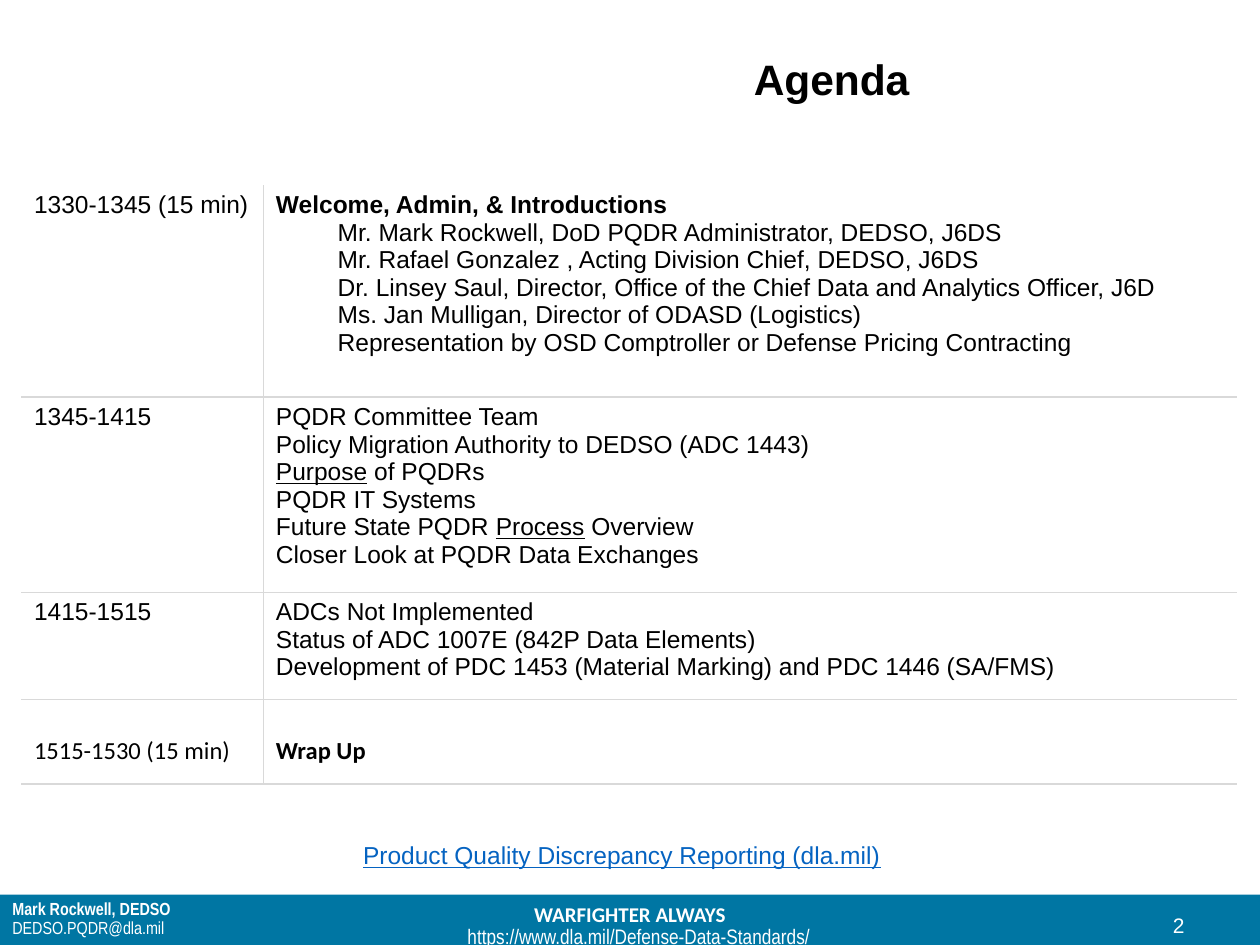
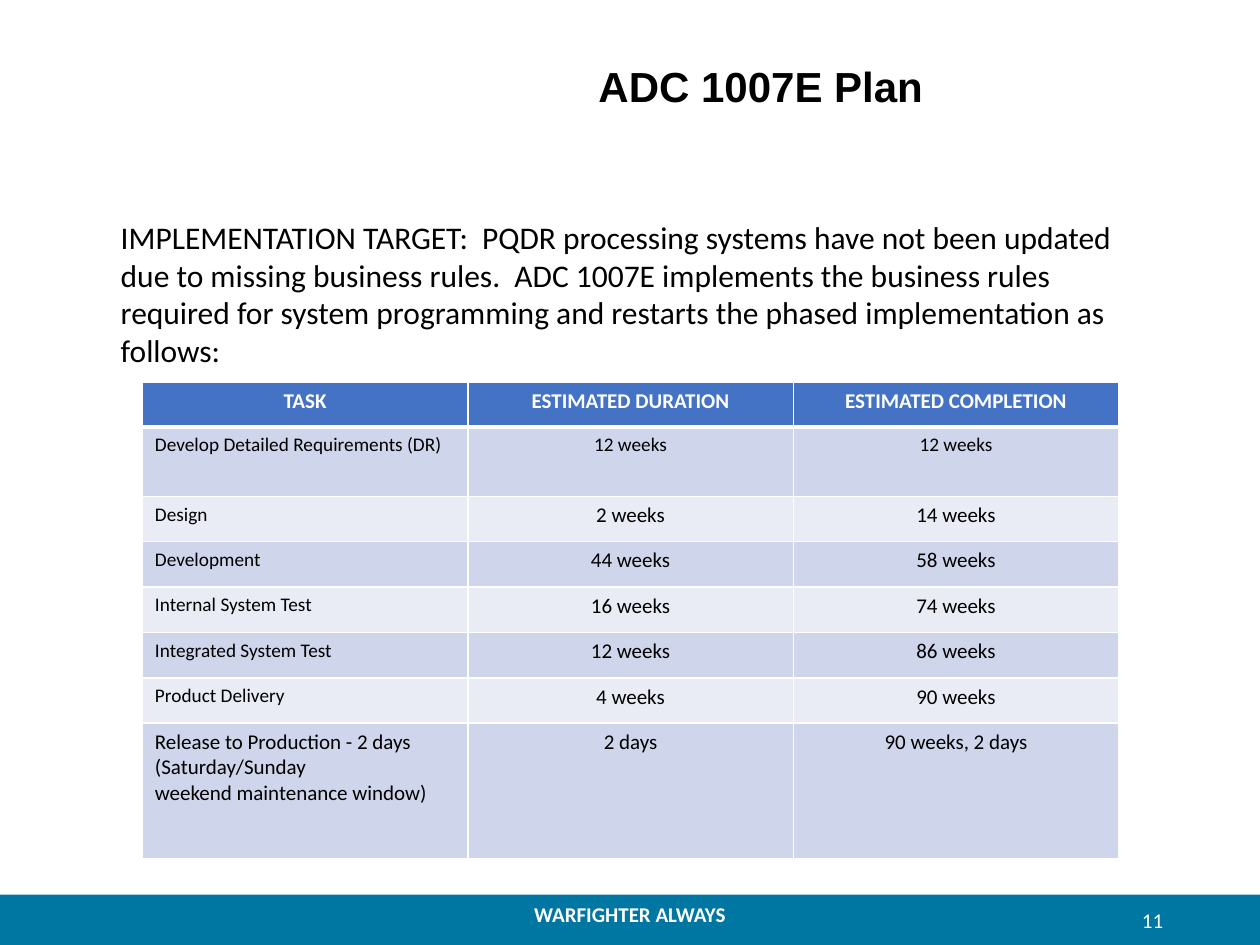
from lxml.etree import SubElement
from pptx import Presentation
from pptx.dml.color import RGBColor
from pptx.enum.shapes import MSO_SHAPE
from pptx.enum.text import MSO_ANCHOR, PP_ALIGN
from pptx.oxml import parse_xml
from pptx.oxml.ns import nsdecls, qn
from pptx.util import Inches, Pt

COLORS = {
    "black": "000000",
    "white": "FFFFFF",
    "band": "0076A3",
    "rule": "D9D9D9",
    "link": "0563C1",
    "header": "4472C4",
    "dark_row": "CFD5EA",
    "light_row": "E9EBF5",
}

AGENDA = [
    ("1330-1345 (15 min)", [
        "Welcome, Admin, & Introductions",
        "Mr. Mark Rockwell, DoD PQDR Administrator, DEDSO, J6DS",
        "Mr. Rafael Gonzalez , Acting Division Chief, DEDSO, J6DS",
        "Dr. Linsey Saul, Director, Office of the Chief Data and Analytics Officer, J6D",
        "Ms. Jan Mulligan, Director of ODASD (Logistics)",
        "Representation by OSD Comptroller or Defense Pricing Contracting",
    ]),
    ("1345-1415", [
        "PQDR Committee Team",
        "Policy Migration Authority to DEDSO (ADC 1443)",
        "Purpose of PQDRs",
        "PQDR IT Systems",
        "Future State PQDR Process Overview",
        "Closer Look at PQDR Data Exchanges",
    ]),
    ("1415-1515", [
        "ADCs Not Implemented",
        "Status of ADC 1007E (842P Data Elements)",
        "Development of PDC 1453 (Material Marking) and PDC 1446 (SA/FMS)",
    ]),
    ("1515-1530 (15 min)", ["Wrap Up"]),
]
UNDERLINED = ("Purpose", "Process")

PLAN = [
    ("TASK", "ESTIMATED DURATION", "ESTIMATED COMPLETION"),
    ("Develop Detailed Requirements (DR)", "12 weeks", "12 weeks"),
    ("Design", "2 weeks", "14 weeks"),
    ("Development", "44 weeks", "58 weeks"),
    ("Internal System Test", "16 weeks", "74 weeks"),
    ("Integrated System Test", "12 weeks", "86 weeks"),
    ("Product Delivery", "4 weeks", "90 weeks"),
    ("Release to Production - 2 days (Saturday/Sunday\vweekend maintenance window)",
     "2 days", "90 weeks, 2 days"),
]


class Deck:
    """Hold the shared style and the current slide."""

    def __init__(self):
        self.prs = Presentation()
        self.prs.slide_width, self.prs.slide_height = Inches(10), Inches(7.5)
        self.s = None

    def slide(self):
        self.s = self.prs.slides.add_slide(self.prs.slide_layouts[6])
        sp = self.s.shapes.add_shape(MSO_SHAPE.RECTANGLE, Inches(0), Inches(7.1), Inches(10), Inches(0.4))
        sp.shadow.inherit = False
        sp.fill.solid()
        sp.fill.fore_color.rgb = RGBColor.from_string(COLORS["band"])
        sp.line.fill.background()
        self.text(0, 7.11, 10, 0.3, "WARFIGHTER ALWAYS", 12, "Calibri", "white",
                  bold=True, align=PP_ALIGN.CENTER)

    def style(self, r, size, font, color="black", bold=False, underline=False):
        r.font.size = Pt(size)
        r.font.name = font
        r.font.color.rgb = RGBColor.from_string(COLORS[color])
        r.font.bold = bold
        r.font.underline = underline

    def text(self, x, y, w, h, text, size, font, color="black", bold=False, underline=False,
             align=PP_ALIGN.LEFT, anchor=MSO_ANCHOR.TOP):
        tf = self.s.shapes.add_textbox(Inches(x), Inches(y), Inches(w), Inches(h)).text_frame
        tf.word_wrap = True
        tf.vertical_anchor = anchor
        tf.text = text
        for p in tf.paragraphs:
            p.alignment = align
            for r in p.runs:
                self.style(r, size, font, color, bold, underline)
        return tf

    def title(self, x, y, w, text, size, align):
        return self.text(x, y, w, 0.9, text, size, "Arial", bold=True, align=align,
                         anchor=MSO_ANCHOR.MIDDLE)

    def number(self, x, y, text, font):
        self.text(x, y, 2.25, 0.4, text, 12, font, "white", align=PP_ALIGN.RIGHT,
                  anchor=MSO_ANCHOR.MIDDLE)

    def table(self, x, y, widths, heights):
        tbl = self.s.shapes.add_table(len(heights), len(widths), Inches(x), Inches(y),
                                      Inches(sum(widths)), Inches(sum(heights))).table
        tbl.first_row = tbl.horz_banding = False
        for col, w in zip(tbl.columns, widths):
            col.width = Inches(w)
        for row, h in zip(tbl.rows, heights):
            row.height = Inches(h)
        return tbl

    def borders(self, cell, color, widths):
        tcPr = cell._tc.get_or_add_tcPr()
        for side in "LRTB":
            width = widths.get(side, 0)
            ln = parse_xml(f'<a:ln{side} {nsdecls("a")} w="{Pt(width)}"/>')
            if width:
                fill = SubElement(ln, qn("a:solidFill"))
                SubElement(fill, qn("a:srgbClr"), val=COLORS[color])
            else:
                SubElement(ln, qn("a:noFill"))
            tcPr.append(ln)

    def agenda_cell(self, cell, lines, font, top):
        self.borders(cell, "rule", {"B": 1})
        cell.fill.background()
        cell.margin_top, cell.margin_bottom = Inches(top), Inches(0.1)
        tf = cell.text_frame
        tf.text = "\n".join(lines)
        for p, line in zip(tf.paragraphs, lines):
            word = next((u for u in UNDERLINED if u in line), None)
            if word:
                before, after = line.split(word)
                p.text = before
                for part in (word, after):
                    p.add_run().text = part
            for r in p.runs:
                self.style(r, 14, font, bold=line in (AGENDA[0][1][0], "Wrap Up"),
                           underline=r.text == word)

    def agenda(self):
        tbl = self.table(0.17, 1.47, [1.92, 7.73], [1.68, 1.46, 0.81, 0.67])
        for i, (time, lines) in enumerate(AGENDA):
            last = i == len(AGENDA) - 1
            font, top = ("Calibri", 0.29) if last else ("Arial", 0.05)
            for j, content in enumerate(([time], lines)):
                self.agenda_cell(tbl.cell(i, j), content, font, top)
            for cell, side in ((tbl.cell(i, 0), "lnR"), (tbl.cell(i, 1), "lnL")):
                ln = cell._tc.tcPr.find(qn(f"a:{side}"))
                ln.set("w", str(Pt(1)))
                ln.remove(ln[0])
                fill = SubElement(ln, qn("a:solidFill"))
                SubElement(fill, qn("a:srgbClr"), val=COLORS["rule"])
        for p in tbl.cell(0, 1).text_frame.paragraphs[1:]:
            pPr = p._p.get_or_add_pPr()
            pPr.set("marL", str(Inches(0.49)))
            pPr.set("indent", "0")

    def plan(self):
        tbl = self.table(1.13, 3.03, [7.75 / 3] * 3, [0.36, 0.55] + [0.36] * 5 + [1.08])
        for i, row in enumerate(PLAN):
            fill = "header" if i == 0 else "dark_row" if i % 2 else "light_row"
            for j, text in enumerate(row):
                cell = tbl.cell(i, j)
                self.borders(cell, "white", {"L": 1, "R": 1, "T": 3 if i == 1 else 1,
                                             "B": 3 if i == 0 else 1})
                cell.fill.solid()
                cell.fill.fore_color.rgb = RGBColor.from_string(COLORS[fill])
                cell.text_frame.text = text
                p = cell.text_frame.paragraphs[0]
                p.alignment = PP_ALIGN.CENTER if i == 0 or j else PP_ALIGN.LEFT
                small = i == 1 or (j == 0 and 1 < i < len(PLAN) - 1)
                for r in p.runs:
                    self.style(r, 11 if small else 12, "Calibri",
                               "black" if i else "white", bold=i == 0)


def main():
    deck = Deck()

    deck.slide()
    tf = deck.title(3.35, 0.22, 6.5, "Agenda", 24.3, PP_ALIGN.CENTER)
    tf.margin_bottom = Inches(0.15)
    deck.number(7.25, 7.14, "2", "Arial")
    tf = deck.text(0, 7.1, 3, 0.4, "Mark Rockwell, DEDSO\nDEDSO.PQDR@dla.mil", 10, "Arial Narrow",
                   "white", anchor=MSO_ANCHOR.MIDDLE)
    for p in tf.paragraphs:
        p.line_spacing = 0.9
    tf.paragraphs[0].runs[0].font.bold = True
    deck.agenda()
    deck.text(0.94, 6.62, 7.99, 0.34, "Product Quality Discrepancy Reporting (dla.mil)", 14, "Arial",
              "link", underline=True, align=PP_ALIGN.CENTER)
    deck.text(3.57, 7.28, 3, 0.3, "https://www.dla.mil/Defense-Data-Standards/", 12, "Arial Narrow",
              "white", align=PP_ALIGN.CENTER)

    deck.slide()
    tf = deck.title(4.25, 0.15, 4.77, "ADC 1007E Plan", 24, PP_ALIGN.LEFT)
    tf.margin_left, tf.margin_top = Inches(0.5), Inches(0.21)
    deck.number(7.08, 7.1, "11", "Calibri")
    deck.plan()
    deck.text(0.86, 1.68, 8.32, 1.31,
              "IMPLEMENTATION TARGET:  PQDR processing systems have not been updated due to missing "
              "business rules.  ADC 1007E implements the business rules required for system "
              "programming and restarts the phased implementation as follows:", 18, "Calibri")

    deck.prs.save("out.pptx")


if __name__ == "__main__":
    main()
